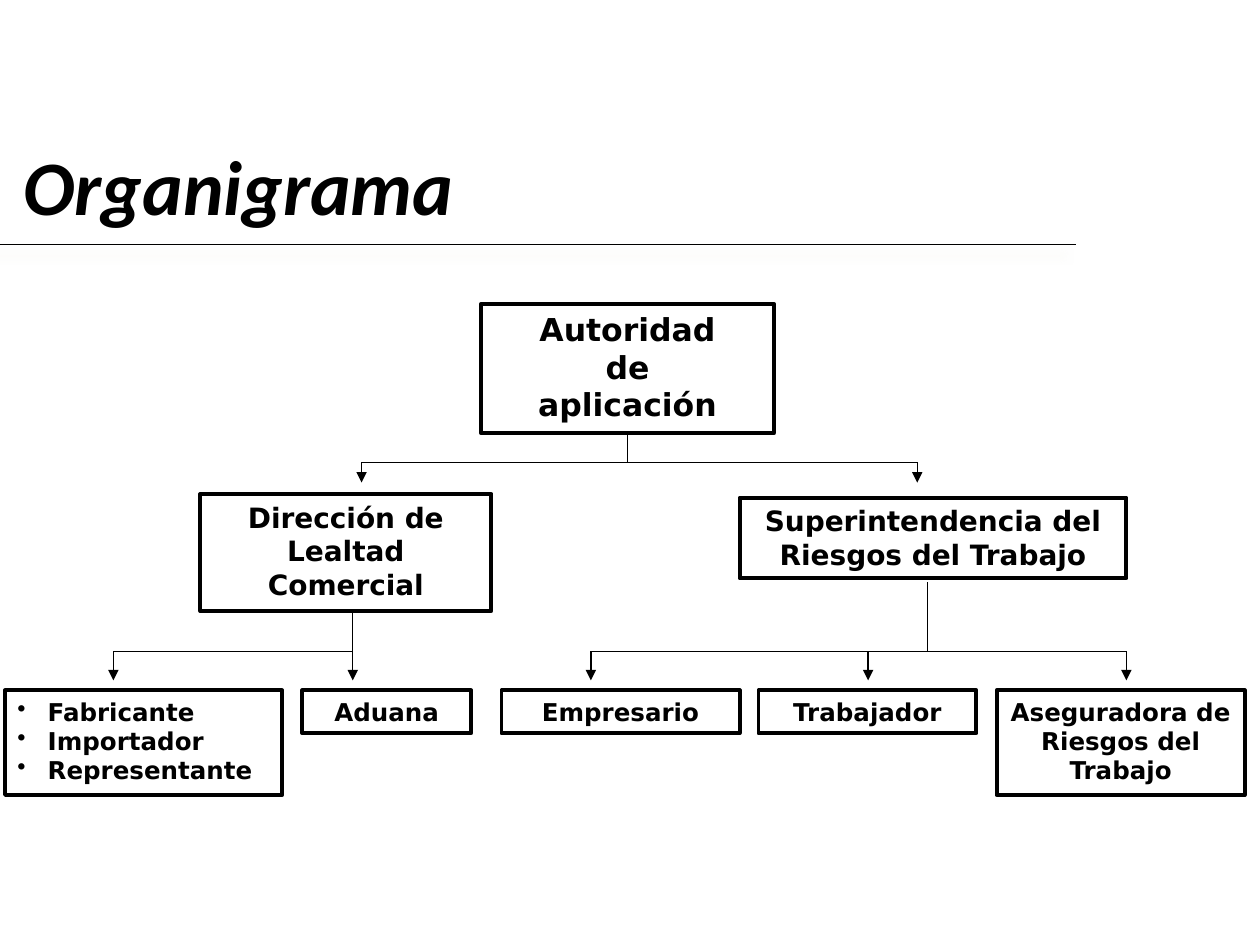
from lxml import etree
from pptx import Presentation
from pptx.dml.color import RGBColor
from pptx.enum.shapes import MSO_CONNECTOR, MSO_SHAPE
from pptx.enum.text import MSO_ANCHOR, MSO_AUTO_SIZE, PP_ALIGN
from pptx.oxml.ns import qn
from pptx.util import Inches, Pt

BLACK = RGBColor(0x00, 0x00, 0x00)
WHITE = RGBColor(0xFF, 0xFF, 0xFF)
SHADOW = RGBColor(0xEE, 0xEC, 0xE1)
TITLE_FONT = "Calibri"
BOX_FONT = "DejaVu Sans"
BOTTOM_SIDE = 2
LEAF_TOP = 5.48


def style_font(font, name, size):
    font.name = name
    font.size = Pt(size)
    font.bold = True
    font.color.rgb = BLACK


def add_title(slide, text):
    title = slide.shapes.title
    title.left, title.top = Inches(-0.28), Inches(0.84)
    title.width, title.height = Inches(4.35), Inches(1.25)
    title.text_frame.vertical_anchor = MSO_ANCHOR.MIDDLE
    paragraph = title.text_frame.paragraphs[0]
    paragraph.alignment = PP_ALIGN.CENTER
    run = paragraph.add_run()
    run.text = text
    style_font(run.font, TITLE_FONT, 44)
    run.font.italic = True


def add_bullet(paragraph):
    properties = paragraph._p.get_or_add_pPr()
    indent = Inches(0.24)
    properties.set("marL", str(indent))
    properties.set("indent", str(-indent))
    etree.SubElement(properties, qn("a:buChar")).set("char", "•")


def add_box(slide, left, top, width, height, lines, size, filled=False, bulleted=False):
    box = slide.shapes.add_shape(
        MSO_SHAPE.RECTANGLE, Inches(left), Inches(top), Inches(width), Inches(height))
    box.shadow.inherit = False
    if filled:
        box.fill.solid()
        box.fill.fore_color.rgb = WHITE
    else:
        box.fill.background()
    box.line.color.rgb = BLACK
    box.line.width = Pt(2.25)

    frame = box.text_frame
    frame.word_wrap = True
    frame.auto_size = MSO_AUTO_SIZE.SHAPE_TO_FIT_TEXT
    frame.vertical_anchor = MSO_ANCHOR.TOP
    for index, line in enumerate(lines):
        paragraph = frame.add_paragraph() if index else frame.paragraphs[0]
        paragraph.alignment = PP_ALIGN.LEFT if bulleted else PP_ALIGN.CENTER
        if bulleted:
            add_bullet(paragraph)
        run = paragraph.add_run()
        run.text = line
        style_font(run.font, BOX_FONT, size)
    return box


def add_line(shapes, start, end, arrow=False):
    """Draw a thin line; return it with its empty effect list."""
    points = [Inches(value) for value in (*start, *end)]
    line = shapes.add_connector(MSO_CONNECTOR.STRAIGHT, *points)
    line.line.color.rgb = BLACK
    line.line.width = Pt(0.75)
    if arrow:
        tail = etree.SubElement(line.line._get_or_add_ln(), qn("a:tailEnd"))
        tail.set("type", "triangle")
    effects = etree.SubElement(line._element.spPr, qn("a:effectLst"))
    return line, effects


def add_title_rule(slide):
    _, effects = add_line(slide.shapes, (0, 1.94), (8.54, 1.94))
    shadow = etree.SubElement(effects, qn("a:outerShdw"))
    shadow.set("blurRad", str(Pt(5)))
    shadow.set("dist", str(Pt(8.5)))
    shadow.set("dir", str(135 * 60000))
    color = etree.SubElement(shadow, qn("a:srgbClr"))
    color.set("val", str(SHADOW))
    etree.SubElement(color, qn("a:alpha")).set("val", "50000")


def add_branch(slide, trunk_x, top, bus_y, tip_y, drops):
    """Group a trunk, a horizontal bus and an arrow per drop; return the trunk."""
    shapes = slide.shapes.add_group_shape().shapes
    trunk_is_arrow = trunk_x in drops
    trunk_end = tip_y if trunk_is_arrow else bus_y
    trunk, _ = add_line(shapes, (trunk_x, top), (trunk_x, trunk_end), trunk_is_arrow)
    add_line(shapes, (min(drops), bus_y), (max(drops), bus_y))
    for x in drops:
        if x != trunk_x:
            add_line(shapes, (x, bus_y), (x, tip_y), arrow=True)
    return trunk


def main():
    presentation = Presentation()
    presentation.slide_width, presentation.slide_height = Inches(10), Inches(7.5)
    slide = presentation.slides.add_slide(presentation.slide_layouts[5])
    add_title(slide, "Organigrama")
    add_title_rule(slide)

    authority = add_box(slide, 3.82, 2.41, 2.32, 1.03,
                        ["Autoridad", "de", "aplicación"], 18)
    add_box(slide, 1.59, 3.92, 2.31, 0.93,
            ["Dirección de", "Lealtad Comercial"], 16, filled=True)
    add_box(slide, 5.87, 3.95, 3.07, 0.64,
            ["Superintendencia del", "Riesgos del Trabajo"], 16, filled=True)

    add_box(slide, 0.04, LEAF_TOP, 2.2, 0.83,
            ["Fabricante", "Importador", "Representante"], 14, filled=True, bulleted=True)
    add_box(slide, 2.4, LEAF_TOP, 1.34, 0.34, ["Aduana"], 14, filled=True)
    add_box(slide, 3.98, LEAF_TOP, 1.89, 0.34, ["Empresario"], 14)
    add_box(slide, 6.02, LEAF_TOP, 1.73, 0.34, ["Trabajador"], 14)
    add_box(slide, 7.91, LEAF_TOP, 1.97, 0.83,
            ["Aseguradora de Riesgos del Trabajo"], 14)

    trunk = add_branch(slide, 4.98, 3.44, 3.67, 3.83, [2.87, 7.28])
    trunk.begin_connect(authority, BOTTOM_SIDE)
    add_branch(slide, 2.8, 4.85, 5.17, 5.4, [0.9, 2.8])
    add_branch(slide, 7.36, 4.62, 5.17, 5.4, [4.69, 6.89, 8.94])

    presentation.save("out.pptx")


if __name__ == "__main__":
    main()
